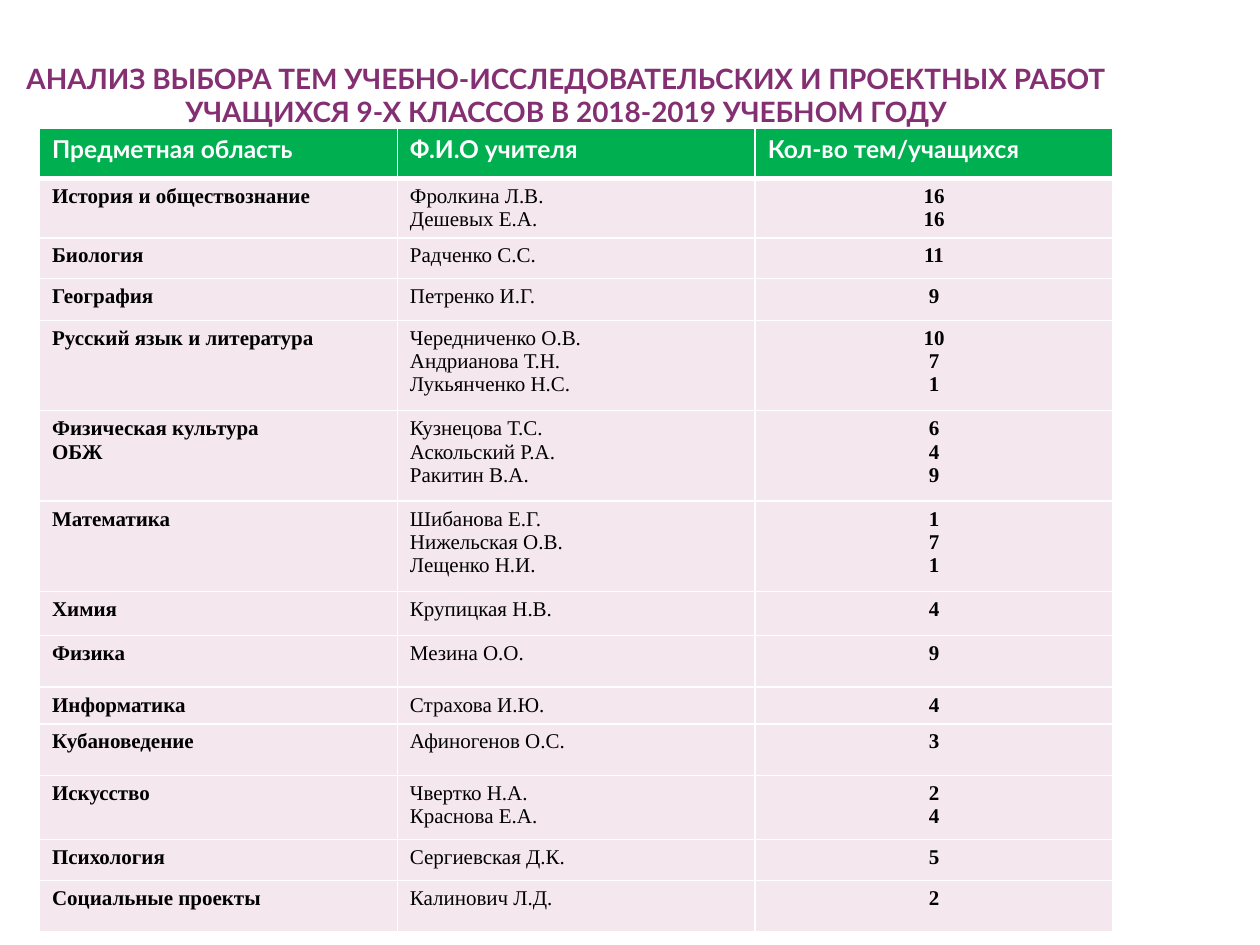
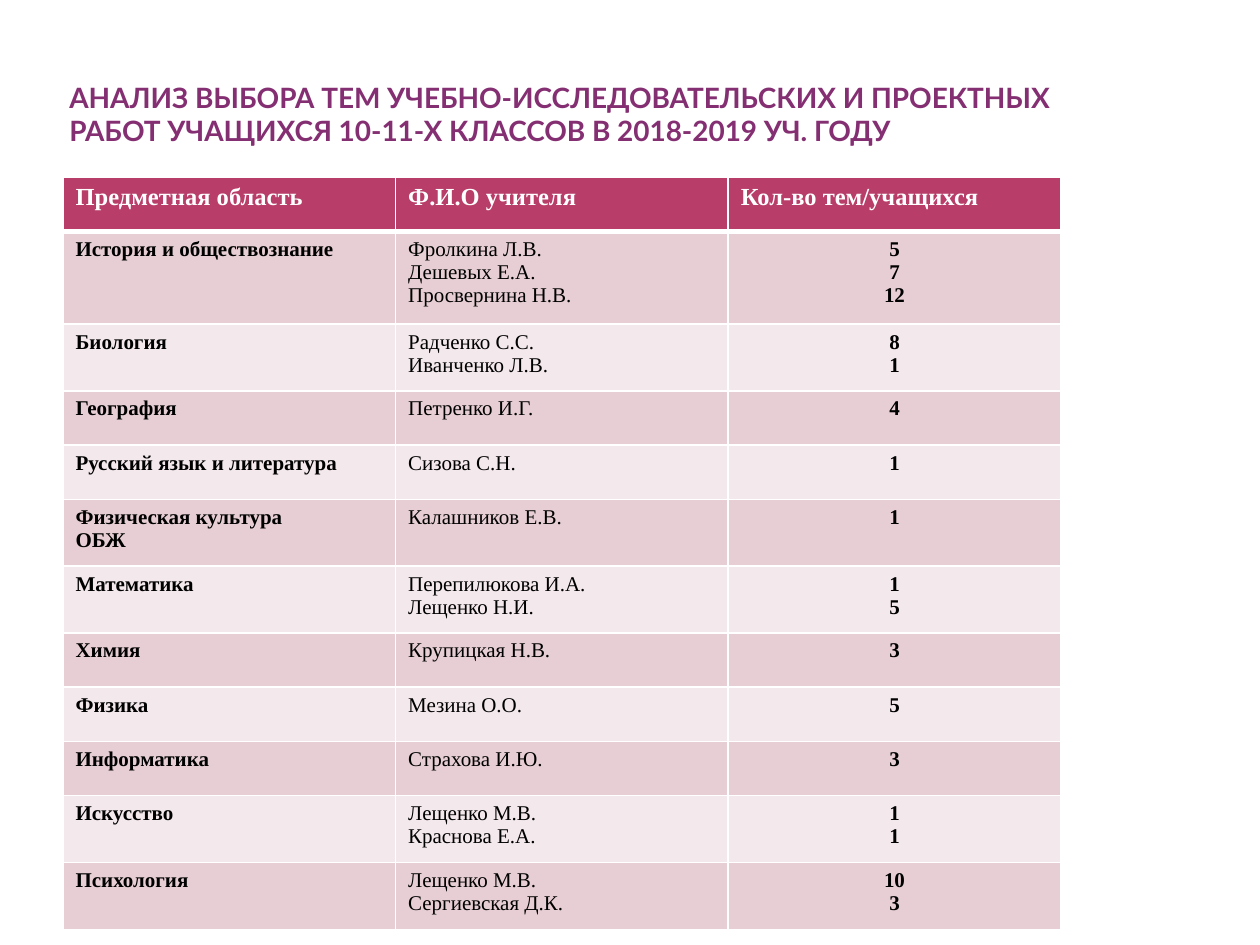
"""Build two slides with tables of research topics chosen by school classes."""
from dataclasses import dataclass

from lxml import etree
from pptx import Presentation
from pptx import util as u
from pptx.dml import color
from pptx.enum import text
from pptx.oxml import ns

TITLE_FONT, BODY_FONT = "Lato", "Times New Roman"
TITLE_COLOR, TITLE_OUTLINE = "852F73", "5E1A50"
WHITE, BLACK = "FFFFFF", "000000"
HEADINGS = ("Предметная область", "Ф.И.О учителя", "Кол-во тем/учащихся")
LEFT, CENTER = text.PP_ALIGN.LEFT, text.PP_ALIGN.CENTER


@dataclass(frozen=True)
class Box:
    left: float
    top: float
    width: float
    height: float


@dataclass(frozen=True)
class Subject:
    """Newlines separate the paragraphs of a cell."""
    name: str
    teachers: str
    counts: str
    height: float


@dataclass(frozen=True)
class TopicSlide:
    title: str
    title_box: Box
    title_align: text.PP_ALIGN
    table_box: Box
    header_font: str
    header_fill: str
    header_height: float
    row_fills: tuple[str, ...]
    subjects: tuple[Subject, ...]


TOPIC_SLIDES = (
    TopicSlide(
        "АНАЛИЗ ВЫБОРА ТЕМ УЧЕБНО-ИССЛЕДОВАТЕЛЬСКИХ И ПРОЕКТНЫХ РАБОТ "
        "УЧАЩИХСЯ 9-Х КЛАССОВ В 2018-2019 УЧЕБНОМ ГОДУ",
        Box(11.5, 11.5, 624.2, 62), CENTER, Box(22.6, 73.2, 613.4, 459),
        TITLE_FONT, "00B050", 28.8, ("F4E7ED",),
        (
            Subject("История и обществознание", "Фролкина Л.В.\nДешевых Е.А.", "16\n16", 33.4),
            Subject("Биология", "Радченко С.С.", "11", 23.2),
            Subject("География", "Петренко И.Г.", "9", 24),
            Subject("Русский язык и литература",
                    "Чередниченко О.В.\nАндрианова Т.Н.\nЛукьянченко Н.С.", "10\n7\n1", 51.7),
            Subject("Физическая культура\nОБЖ",
                    "Кузнецова Т.С.\nАскольский Р.А.\nРакитин В.А.", "6\n4\n9", 51.7),
            Subject("Математика", "Шибанова Е.Г.\nНижельская О.В.\nЛещенко Н.И.", "1\n7\n1", 51.7),
            Subject("Химия", "Крупицкая Н.В.", "4", 25.2),
            Subject("Физика", "Мезина О.О.", "9", 29.4),
            Subject("Информатика", "Страхова И.Ю.", "4", 21),
            Subject("Кубановедение", "Афиногенов О.С.", "3", 29.6),
            Subject("Искусство", "Чвертко Н.А.\nКраснова Е.А.", "2\n4", 36.6),
            Subject("Психология", "Сергиевская Д.К.", "5", 23.2),
            Subject("Социальные проекты", "Калинович Л.Д.", "2", 29.4),
        ),
    ),
    TopicSlide(
        "АНАЛИЗ ВЫБОРА ТЕМ УЧЕБНО-ИССЛЕДОВАТЕЛЬСКИХ И ПРОЕКТНЫХ РАБОТ "
        "УЧАЩИХСЯ 10-11-Х КЛАССОВ В 2018-2019 УЧ. ГОДУ",
        Box(36, 25.2, 570.2, 59), LEFT, Box(36, 101.5, 570.2, 430),
        BODY_FONT, "B83D68", 30.7, ("E6CED4", "F3E8EB"),
        (
            Subject("История и обществознание",
                    "Фролкина Л.В.\nДешевых Е.А.\nПросвернина Н.В.", "5\n7\n12", 53),
            Subject("Биология", "Радченко С.С.\nИванченко Л.В.", "8\n1", 38.2),
            Subject("География", "Петренко И.Г.", "4", 31),
            Subject("Русский язык и литература", "Сизова С.Н.", "1", 31),
            Subject("Физическая культура\nОБЖ", "Калашников Е.В.", "1", 38.2),
            Subject("Математика", "Перепилюкова И.А.\nЛещенко Н.И.", "1\n5", 38.2),
            Subject("Химия", "Крупицкая Н.В.", "3", 31),
            Subject("Физика", "Мезина О.О.", "5", 31),
            Subject("Информатика", "Страхова И.Ю.", "3", 31),
            Subject("Искусство", "Лещенко М.В.\nКраснова Е.А.", "1\n1", 38.2),
            Subject("Психология", "Лещенко М.В.\nСергиевская Д.К.", "10\n3", 38.2),
        ),
    ),
)


def rgb(value: str) -> color.RGBColor:
    return color.RGBColor.from_string(value)


def make_line(tag: str, points: float, line_color: str):
    line = etree.Element(ns.qn(tag), w=str(int(u.Pt(points))))
    fill = etree.SubElement(line, ns.qn("a:solidFill"))
    etree.SubElement(fill, ns.qn("a:srgbClr"), val=line_color)
    return line


def add_run(paragraph, content: str, font: str, size: float, font_color: str, bold: bool):
    run = paragraph.add_run()
    run.text = content
    run.font.name = font
    run.font.size = u.Pt(size)
    run.font.bold = bold
    run.font.color.rgb = rgb(font_color)
    return run


def add_title(slide, topic: TopicSlide) -> None:
    shape, box = slide.shapes.title, topic.title_box
    shape.left, shape.top = u.Pt(box.left), u.Pt(box.top)
    shape.width, shape.height = u.Pt(box.width), u.Pt(box.height)
    frame = shape.text_frame
    frame.word_wrap = True
    frame.auto_size = text.MSO_AUTO_SIZE.NONE
    frame.vertical_anchor = text.MSO_ANCHOR.BOTTOM
    frame.margin_left = frame.margin_right = u.Pt(3.6)
    frame.margin_top = frame.margin_bottom = 0
    paragraph = frame.paragraphs[0]
    paragraph.alignment = topic.title_align
    run = add_run(paragraph, topic.title, TITLE_FONT, 16, TITLE_COLOR, True)
    run.font._element.insert(0, make_line("a:ln", 0.04, TITLE_OUTLINE))


def fill_cell(cell, content: str, fill: str, font: str, size: float, font_color: str,
              bold: bool, align: text.PP_ALIGN, top: float, bottom: float) -> None:
    properties = cell._tc.get_or_add_tcPr()
    for tag, width in (("a:lnL", 1), ("a:lnR", 1), ("a:lnT", top), ("a:lnB", bottom)):
        properties.append(make_line(tag, width, WHITE))
    cell.fill.solid()
    cell.fill.fore_color.rgb = rgb(fill)
    frame = cell.text_frame
    for index, line in enumerate(content.split("\n")):
        paragraph = frame.add_paragraph() if index else frame.paragraphs[0]
        paragraph.alignment = align
        add_run(paragraph, line, font, size, font_color, bold)


def add_topic_table(slide, topic: TopicSlide) -> None:
    box = topic.table_box
    table = slide.shapes.add_table(
        len(topic.subjects) + 1, len(HEADINGS),
        u.Pt(box.left), u.Pt(box.top), u.Pt(box.width), u.Pt(box.height)).table
    for column in table.columns:
        column.width = u.Pt(box.width / len(HEADINGS))
    table.rows[0].height = u.Pt(topic.header_height)
    for column, heading in enumerate(HEADINGS):
        fill_cell(table.cell(0, column), heading, topic.header_fill, topic.header_font,
                  14, WHITE, True, LEFT, 1, 3)
    for row, subject in enumerate(topic.subjects, start=1):
        table.rows[row].height = u.Pt(subject.height)
        fill = topic.row_fills[(row - 1) % len(topic.row_fills)]
        cells = ((subject.name, True, LEFT), (subject.teachers, False, LEFT),
                 (subject.counts, True, CENTER))
        for column, (content, bold, align) in enumerate(cells):
            fill_cell(table.cell(row, column), content, fill, BODY_FONT, 12, BLACK,
                      bold, align, 3 if row == 1 else 1, 1)


def main() -> None:
    presentation = Presentation()
    presentation.slide_width, presentation.slide_height = u.Pt(720), u.Pt(540)
    for topic in TOPIC_SLIDES:
        slide = presentation.slides.add_slide(presentation.slide_layouts[5])
        add_title(slide, topic)
        add_topic_table(slide, topic)
    presentation.save("out.pptx")


if __name__ == "__main__":
    main()
